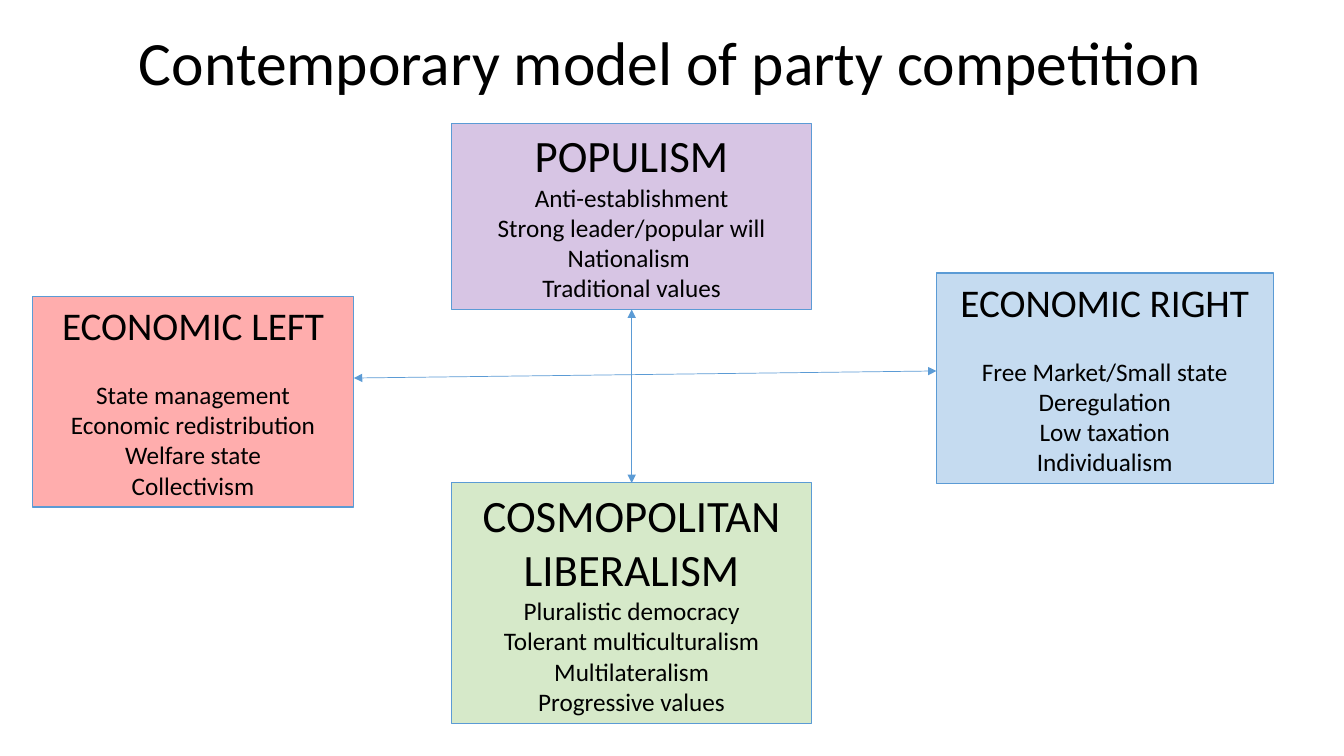
from lxml.etree import SubElement
from pptx import Presentation
from pptx.dml.color import RGBColor
from pptx.enum.shapes import MSO_CONNECTOR, MSO_SHAPE
from pptx.enum.text import MSO_ANCHOR, MSO_AUTO_SIZE, PP_ALIGN
from pptx.oxml.ns import qn
from pptx.util import Pt

COLORS = {
    "text": "000000",
    "outline": "5B9BD5",
    "left": "FF0000",
    "right": "9DC3E6",
    "populism": "7030A0",
    "liberalism": "A9D18E",
}


def color(name):
    return RGBColor.from_string(COLORS[name])


def add_line(paragraph, text, size):
    paragraph.alignment = PP_ALIGN.CENTER
    run = paragraph.add_run()
    run.text = text
    run.font.name = "Calibri"
    run.font.size = Pt(size)
    run.font.color.rgb = color("text")


presentation = Presentation()
presentation.slide_width = Pt(960)
presentation.slide_height = Pt(540)
slide = presentation.slides.add_slide(presentation.slide_layouts[5])

title = slide.shapes.title
title.left, title.top, title.width, title.height = Pt(65), Pt(8), Pt(828), Pt(77)
title.text_frame.vertical_anchor = MSO_ANCHOR.MIDDLE
title.text_frame.auto_size = MSO_AUTO_SIZE.NONE
heading = title.text_frame.paragraphs[0]
heading.line_spacing = 0.9
add_line(heading, "Contemporary model of party competition", 44)

axes = [
    (252.8, 270, 668.9, 265),
    (451.2, 221.1, 451.2, 345),
]
for x1, y1, x2, y2 in axes:
    axis = slide.shapes.add_connector(MSO_CONNECTOR.STRAIGHT, Pt(x1), Pt(y1), Pt(x2), Pt(y2))
    axis.line.color.rgb = color("outline")
    axis.line.width = Pt(0.5)
    for end in ("a:headEnd", "a:tailEnd"):
        SubElement(axis.line._get_or_add_ln(), qn(end), type="triangle")
    SubElement(axis._element.spPr, qn("a:effectLst"))

positions = [
    ("left", 32, (23, 211.7, 229.8, 150.5), "ECONOMIC LEFT", 28, 22,
     ["State management", "Economic redistribution", "Welfare state", "Collectivism"]),
    ("right", 59, (668.9, 195, 240.5, 150.5), "ECONOMIC RIGHT", 28, 22,
     ["Free Market/Small state", "Deregulation", "Low taxation", "Individualism"]),
    ("populism", 28, (322.7, 88, 257, 133.1), "POPULISM", 32, 0,
     ["Anti-establishment", "Strong leader/popular will", "Nationalism ", "Traditional values"]),
    ("liberalism", 47, (322.7, 345, 257, 172), "COSMOPOLITAN LIBERALISM", 32, 0,
     ["Pluralistic democracy", "Tolerant multiculturalism", "Multilateralism", "Progressive values"]),
]
for name, opacity, bounds, label, label_size, gap, ideas in positions:
    position = slide.shapes.add_shape(MSO_SHAPE.RECTANGLE, *[Pt(length) for length in bounds])
    position.shadow.inherit = False
    position.fill.solid()
    position.fill.fore_color.rgb = color(name)
    tint = position._element.spPr.find(qn("a:solidFill")).find(qn("a:srgbClr"))
    SubElement(tint, qn("a:alpha"), val=str(opacity * 1000))
    position.line.color.rgb = color("outline")
    position.line.width = Pt(0.75)

    content = position.text_frame
    content.word_wrap = True
    content.auto_size = MSO_AUTO_SIZE.SHAPE_TO_FIT_TEXT
    content.vertical_anchor = MSO_ANCHOR.TOP
    add_line(content.paragraphs[0], label, label_size)
    for number, idea in enumerate(ideas):
        paragraph = content.add_paragraph()
        if number == 0 and gap:
            paragraph.space_before = Pt(gap)
        add_line(paragraph, idea, 18)

presentation.save("out.pptx")
